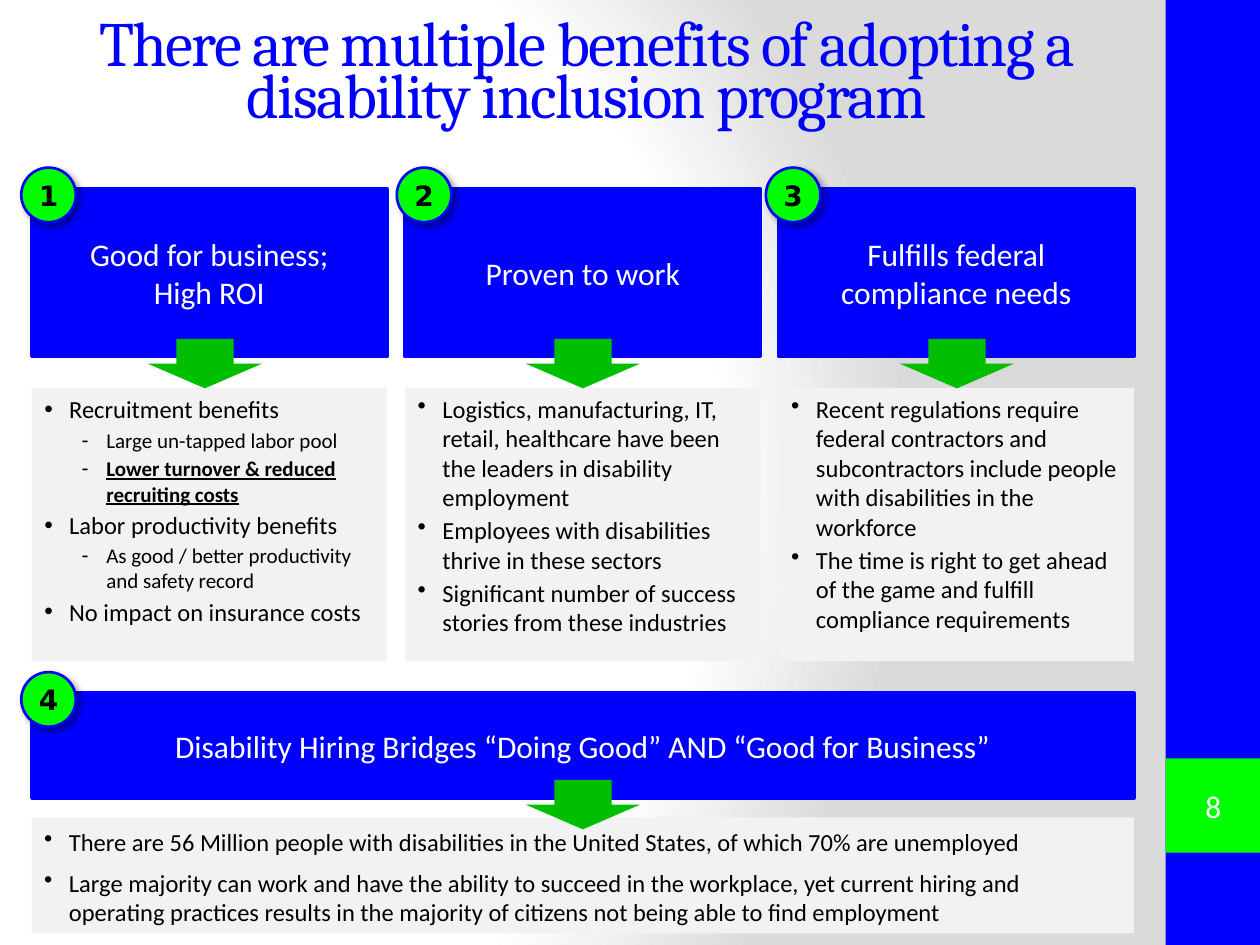
from dataclasses import dataclass

from lxml.etree import SubElement, fromstring
from pptx import Presentation
from pptx.dml.color import RGBColor
from pptx.enum.shapes import MSO_SHAPE as Preset
from pptx.enum.text import MSO_ANCHOR as Anchor, MSO_AUTO_SIZE as AutoSize, PP_ALIGN as Align
from pptx.oxml.ns import nsdecls, qn
from pptx.util import Cm, Pt

COLORS = {
    "blue": "0000FF", "green": "00FF00", "arrow": "00BF00", "panel": "F2F2F2",
    "white": "FFFFFF", "black": "000000", "shade": "DADADA",
}


@dataclass
class Item:
    text: str
    level: int = 0
    strong: bool = False


@dataclass
class Card:
    """A numbered header with an arrow to its panel; lengths in cm."""
    number: str
    heading: str
    items: list[Item]
    left: float
    badge_left: float
    arrow_center: float
    list_height: float
    list_top: float = 7.82
    width: float = 7.16
    header_top: float = 3.81
    header_height: float = 3.38
    panel_top: float = 7.82
    panel_height: float = 5.51
    badge_top: float = 3.38
    arrow_middle: float = 7.33
    spacing: float = 2


COLUMN_LEFT, COLUMN_PITCH = 0.64, 7.53
CARDS = [
    Card("1", "Good for business;\vHigh ROI", [
        Item("Recruitment benefits"),
        Item("Large un-tapped labor pool", 1),
        Item("Lower turnover & reduced recruiting costs", 1, True),
        Item("Labor productivity benefits"),
        Item("As good / better productivity and safety record", 1),
        Item("No impact on insurance costs"),
    ], COLUMN_LEFT, 0.43, 4.13, 4.98),
    Card("2", "Proven to work", [
        Item("Logistics, manufacturing, IT, retail, healthcare have been the leaders "
             "in disability employment"),
        Item("Employees with disabilities thrive in these sectors"),
        Item("Significant number of success stories from these industries"),
    ], COLUMN_LEFT + COLUMN_PITCH, 8.0, 11.75, 5.18),
    Card("3", "Fulfills federal compliance needs", [
        Item("Recent regulations require federal contractors and subcontractors include "
             "people with disabilities in the workforce"),
        Item("The time is right to get ahead of the game and fulfill compliance requirements"),
    ], COLUMN_LEFT + 2 * COLUMN_PITCH, 15.44, 19.29, 5.11),
    Card("4", "Disability Hiring Bridges “Doing Good” AND “Good for Business”", [
        Item("There are 56 Million people with disabilities in the United States, "
             "of which 70% are unemployed"),
        Item("Large majority can work and have the ability to succeed in the workplace, "
             "yet current hiring and operating practices results in the majority of "
             "citizens not being able to find employment"),
    ], COLUMN_LEFT, 0.43, 11.75, 2.31, list_top=16.54, width=22.22, header_top=13.97,
        header_height=2.12, panel_top=16.48, panel_height=2.34, badge_top=13.55,
        arrow_middle=16.22, spacing=6.7),
]


def color(name: str) -> RGBColor:
    return RGBColor.from_string(COLORS[name])


def place(shape, left: float, top: float, width: float, height: float) -> None:
    shape.left, shape.top, shape.width, shape.height = map(Cm, (left, top, width, height))


def add_block(slide, preset, left: float, top: float, width: float, height: float,
              fill: str, line_width: float = 0):
    shape = slide.shapes.add_shape(preset, Cm(left), Cm(top), Cm(width), Cm(height))
    shape.shadow.inherit = False
    shape.fill.solid()
    shape.fill.fore_color.rgb = color(fill)
    if line_width:
        shape.line.color.rgb = color("blue")
        shape.line.width = Pt(line_width)
    else:
        shape.line.fill.background()
    return shape


def style(paragraph, size: float, font_color: str, name: str = "Calibri") -> None:
    paragraph.font.size = Pt(size)
    paragraph.font.name = name
    paragraph.font.color.rgb = color(font_color)


def set_label(shape, text: str, size: float, font_color: str, name: str = "Calibri"):
    shape.text_frame.vertical_anchor = Anchor.MIDDLE
    paragraph = shape.text_frame.paragraphs[0]
    paragraph.text = text
    paragraph.alignment = Align.CENTER
    style(paragraph, size, font_color, name)
    return paragraph


def clear_margins(frame) -> None:
    frame.margin_left = frame.margin_right = frame.margin_top = frame.margin_bottom = 0


def add_badge(slide, card: Card) -> None:
    badge = add_block(slide, Preset.OVAL, card.badge_left, card.badge_top, 1.1, 1.1, "green", 1.5)
    clear_margins(badge.text_frame)
    badge.text_frame.word_wrap = False
    set_label(badge, card.number, 16, "black", "DejaVu Sans").font.bold = True
    effects = badge.element.spPr.find(qn("a:effectLst"))
    shadow = SubElement(effects, qn("a:outerShdw"), blurRad=str(Pt(4)), dist=str(Pt(3)),
                        dir="2700000", algn="tl", rotWithShape="0")
    shade = SubElement(shadow, qn("a:srgbClr"), val=COLORS["black"])
    SubElement(shade, qn("a:alpha"), val="40000")


def fill_list(shape, items: list[Item], spacing: float) -> None:
    frame = shape.text_frame
    frame.word_wrap = True
    frame.auto_size = AutoSize.SHAPE_TO_FIT_TEXT
    for index, item in enumerate(items):
        paragraph = frame.add_paragraph() if index else frame.paragraphs[0]
        paragraph.text = item.text
        paragraph.level = item.level
        properties = paragraph._p.get_or_add_pPr()
        properties.set("marL", str(Cm(1.25 if item.level else 0.5)))
        properties.set("indent", str(Cm(-0.5)))
        SubElement(properties, qn("a:buChar"), char="-" if item.level else "•")
        paragraph.space_before = Pt(spacing if index else 0)
        style(paragraph, 12 if item.level else 14, "black")
        if item.strong:
            paragraph.font.bold = paragraph.font.underline = True


def add_card(slide, card: Card, body=None) -> None:
    add_block(slide, Preset.RECTANGLE, card.left, card.panel_top, card.width,
              card.panel_height, "panel")
    header = add_block(slide, Preset.RECTANGLE, card.left, card.header_top, card.width,
                       card.header_height, "blue", 2)
    set_label(header, card.heading, 18, "white")
    add_badge(slide, card)
    if body is None:
        body = slide.shapes.add_textbox(0, 0, 0, 0)
    else:
        body.element.getparent().append(body.element)  # in front of its panel
    place(body, card.left, card.list_top, card.width, card.list_height)
    fill_list(body, card.items, card.spacing)
    width, height = 1.0, 2.31
    arrow = add_block(slide, Preset.RIGHT_ARROW, card.arrow_center - width / 2,
                      card.arrow_middle - height / 2, width, height, "arrow")
    arrow.rotation = 90


def set_background(slide) -> None:
    stops = "".join(f'<a:gs pos="{position}"><a:srgbClr val="{COLORS[name]}"/></a:gs>'
                    for position, name in ((0, "white"), (75000, "white"), (100000, "shade")))
    background = fromstring(
        f'<p:bg {nsdecls("p", "a")}><p:bgPr><a:gradFill rotWithShape="1"><a:gsLst>{stops}</a:gsLst>'
        '<a:path path="circle"><a:fillToRect l="20000" t="50000" r="100000" b="50000"/></a:path>'
        '</a:gradFill><a:effectLst/></p:bgPr></p:bg>')
    slide.element.cSld.insert(0, background)


def main() -> None:
    presentation = Presentation()
    presentation.slide_width, presentation.slide_height = Cm(25.4), Cm(19.05)
    slide = presentation.slides.add_slide(presentation.slide_layouts[1])
    set_background(slide)

    # Side band and page number
    add_block(slide, Preset.RECTANGLE, 23.5, 0, 1.9, 19.05, "blue")
    add_block(slide, Preset.RECTANGLE, 23.5, 15.29, 1.9, 1.9, "green")
    page_number = slide.shapes.add_textbox(Cm(23.7), Cm(15.7), Cm(1.52), Cm(1.1))
    clear_margins(page_number.text_frame)
    page_number.text_frame.word_wrap = True
    set_label(page_number, "8", 18, "white")

    # Title
    title = slide.shapes.title
    place(title, 1.24, 0, 21.16, 3.18)
    title.text_frame.auto_size = AutoSize.NONE
    heading = set_label(title, "There are multiple benefits of adopting a disability "
                        "inclusion program", 36, "blue", "Cambria")
    heading.line_spacing = Pt(30)
    heading.runs[0].font._element.set("spc", "-100")

    # Benefit cards; the first list uses the body placeholder
    body = slide.placeholders[1]
    for index, card in enumerate(CARDS):
        add_card(slide, card, None if index else body)

    presentation.save("out.pptx")


if __name__ == "__main__":
    main()
